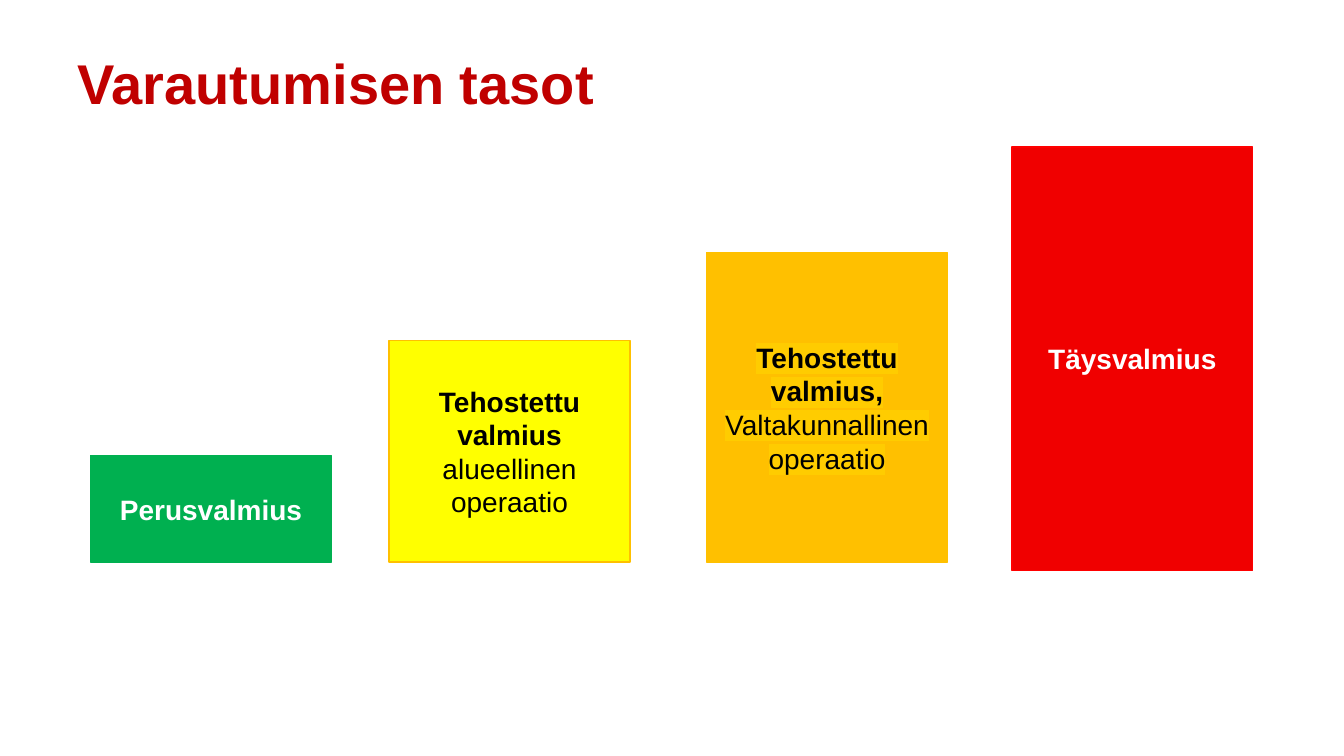
from lxml.etree import SubElement
from pptx import Presentation
from pptx.dml.color import RGBColor
from pptx.enum.shapes import MSO_SHAPE as Shape
from pptx.enum.text import MSO_ANCHOR as Anchor, MSO_AUTO_SIZE as AutoSize, PP_ALIGN as Align
from pptx.oxml.ns import qn
from pptx.util import Pt

COLORS = {
    "title": "C00000", "white": "FFFFFF", "black": "000000",
    "green": "00B050", "yellow": "FFFF00", "amber": "FFC000",
    "gold": "FFCC00", "crimson": "F00000", "red": "FF0000",
}


class LevelSlide:
    font = "Arial"
    title_size = 40
    text_size = 20
    bar_width = 172

    def __init__(self, deck):
        self.page = deck.slides.add_slide(deck.slide_layouts[5])

    def color(self, name):
        return RGBColor.from_string(COLORS[name])

    def add_span(self, para, text, size, color, bold, highlight=None):
        span = para.add_run()
        span.text = text
        span.font.size = Pt(size)
        span.font.bold = bold
        span.font.color.rgb = self.color(color)
        span.font.name = self.font
        if highlight:
            props = span.font._element
            mark = SubElement(props, qn("a:highlight"))
            SubElement(mark, qn("a:srgbClr"), val=COLORS[highlight])
            props.find(qn("a:solidFill")).addnext(mark)

    def add_title(self, text, left, top, width, height):
        box = self.page.shapes.title
        box.left, box.top, box.width, box.height = map(Pt, (left, top, width, height))
        frame = box.text_frame
        frame.word_wrap = True
        frame.auto_size = AutoSize.NONE
        frame.vertical_anchor = Anchor.BOTTOM
        para = frame.paragraphs[0]
        para.alignment = Align.LEFT
        self.add_span(para, text, self.title_size, "title", True)

    def add_bar(self, left, top, height, fill, line, color, lines, highlight=None):
        box = self.page.shapes.add_shape(
            Shape.RECTANGLE, Pt(left), Pt(top), Pt(self.bar_width), Pt(height))
        box.shadow.inherit = False
        box.fill.solid()
        box.fill.fore_color.rgb = self.color(fill)
        box.line.color.rgb = self.color(line)
        box.line.width = Pt(1)
        frame = box.text_frame
        frame.word_wrap = True
        frame.vertical_anchor = Anchor.MIDDLE
        for index, text in enumerate(lines):
            para = frame.add_paragraph() if index else frame.paragraphs[0]
            para.alignment = Align.CENTER
            self.add_span(para, text, self.text_size, color, index == 0, highlight)


def main():
    deck = Presentation()
    deck.slide_width, deck.slide_height = Pt(960), Pt(540)
    slide = LevelSlide(deck)
    slide.add_title("Varautumisen tasot", 48.2, 31, 532, 55.4)
    slide.add_bar(64.8, 325.6, 75.8, "green", "green", "white", ["Perusvalmius"])
    slide.add_bar(278, 243.4, 158, "yellow", "amber", "black",
                  ["Tehostettu valmius", "alueellinen operaatio"], "yellow")
    slide.add_bar(722.9, 105, 302.4, "crimson", "red", "white", ["Täysvalmius"])
    slide.add_bar(504.8, 180.6, 221, "amber", "amber", "black",
                  ["Tehostettu valmius,", "Valtakunnallinen operaatio"], "gold")
    deck.save("out.pptx")


if __name__ == "__main__":
    main()
